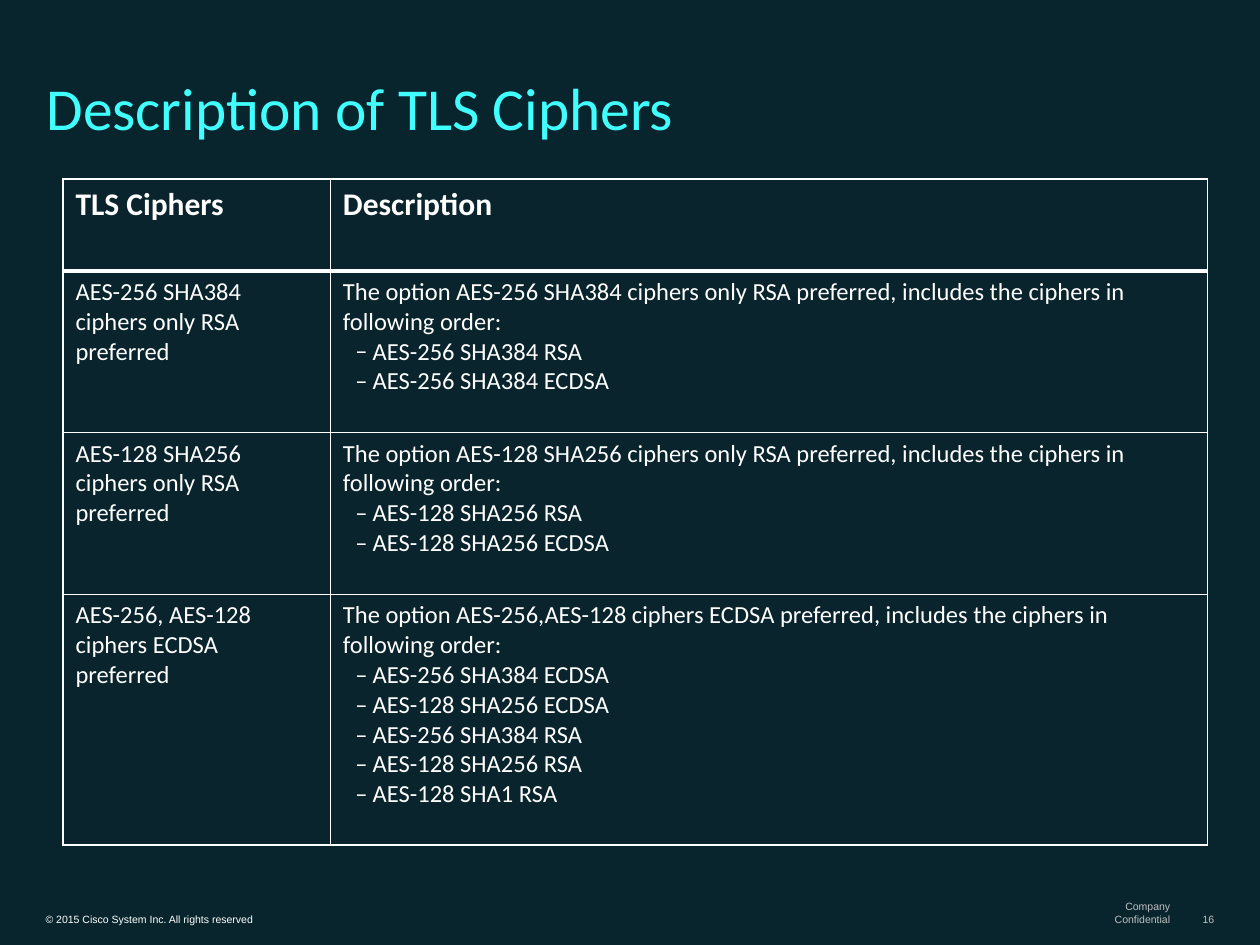
import pptx
import pptx.dml.color
import pptx.enum.text
import pptx.oxml
import pptx.oxml.ns
import pptx.util
from pptx.util import Cm, Pt

ALIGN = pptx.enum.text.PP_ALIGN
WHITE, GREY, CYAN = "FFFFFF", "C0C0C0", "40FFFE"
BACKGROUND, CELL_FILL = "08252E", "09242D"

TITLE = "Description of TLS Ciphers"
HEADINGS = ("TLS Ciphers", "Description")
INTRO = "The option {}, includes the ciphers in following order:"
CIPHERS = [
    ("AES-256 SHA384 ciphers only RSA preferred",
     INTRO.format("AES-256 SHA384 ciphers only RSA preferred"),
     ["AES-256 SHA384 RSA", "AES-256 SHA384 ECDSA"]),
    ("AES-128 SHA256 ciphers only RSA preferred",
     INTRO.format("AES-128 SHA256 ciphers only RSA preferred"),
     ["AES-128 SHA256 RSA", "AES-128 SHA256 ECDSA"]),
    ("AES-256, AES-128 ciphers ECDSA preferred",
     INTRO.format("AES-256,AES-128 ciphers ECDSA preferred"),
     ["AES-256 SHA384 ECDSA", "AES-128 SHA256 ECDSA", "AES-256 SHA384 RSA",
      "AES-128 SHA256 RSA", "AES-128 SHA1 RSA"]),
]
# text, left and width in cm, colour, alignment
FOOTERS = [
    ("© 2015 Cisco System Inc. All rights reserved", 0.69, 9.5, WHITE, ALIGN.LEFT),
    ("Company Confidential", 21.56, 2.26, GREY, ALIGN.RIGHT),
    ("16", 24, 0.71, GREY, ALIGN.RIGHT),
]
COLUMN_WIDTHS = (5.39, 17.68)
ROW_HEIGHTS = (1.85, 3.26, 3.26, 5.06)


def rgb(value):
    return pptx.dml.color.RGBColor.from_string(value)


def style(paragraph, size, color, font="Calibri", bold=False):
    paragraph.font.name = font
    paragraph.font.size = Pt(size)
    paragraph.font.bold = bold
    paragraph.font.color.rgb = rgb(color)


def add_label(slide, text, box, size, color, font, left_inset=0.23):
    """Add a bottom-anchored one-paragraph text box; box is in cm."""
    frame = slide.shapes.add_textbox(*map(Cm, box)).text_frame
    frame.vertical_anchor = pptx.enum.text.MSO_ANCHOR.BOTTOM
    frame.margin_left, frame.margin_right = Cm(left_inset), Cm(0.23)
    frame.margin_top = frame.margin_bottom = Cm(0.11)
    paragraph = frame.paragraphs[0]
    paragraph.text = text
    style(paragraph, size, color, font)
    return frame


def add_dash(paragraph):
    """Give the paragraph a hanging dash bullet."""
    properties = paragraph._p.get_or_add_pPr()
    properties.set("marL", str(Cm(0.6)))
    properties.set("indent", str(-Cm(0.35)))
    namespace = pptx.oxml.ns.nsdecls("a")
    for bullet in ('buFont {} typeface="Calibri"', 'buChar {} char="–"'):
        properties.append(pptx.oxml.parse_xml(f"<a:{bullet.format(namespace)}/>"))


def format_cell(cell, top, bottom):
    """Draw the borders, with top and bottom widths in points, and the fill."""
    properties = cell._tc.get_or_add_tcPr()
    for side, width in (("L", 1), ("R", 1), ("T", top), ("B", bottom)):
        properties.append(pptx.oxml.parse_xml(
            f'<a:ln{side} {pptx.oxml.ns.nsdecls("a")} w="{Pt(width)}">'
            f'<a:solidFill><a:srgbClr val="{WHITE}"/></a:solidFill></a:ln{side}>'))
    cell.fill.solid()
    cell.fill.fore_color.rgb = rgb(CELL_FILL)


def write_cell(cell, text, size, bold=False, items=()):
    first = cell.text_frame.paragraphs[0]
    first.text = text
    style(first, size, WHITE, bold=bold)
    for item in items:
        paragraph = cell.text_frame.add_paragraph()
        paragraph.text = item
        add_dash(paragraph)
        style(paragraph, size, WHITE)


def add_cipher_table(slide):
    table = slide.shapes.add_table(
        len(ROW_HEIGHTS), len(COLUMN_WIDTHS), Cm(1.27), Cm(3.61),
        Cm(sum(COLUMN_WIDTHS)), Cm(sum(ROW_HEIGHTS))).table
    table.first_row = table.horz_banding = False
    for column, width in zip(table.columns, COLUMN_WIDTHS):
        column.width = Cm(width)
    for number, (row, height) in enumerate(zip(table.rows, ROW_HEIGHTS)):
        row.height = Cm(height)
        for cell in row.cells:
            format_cell(cell, 3 if number == 1 else 1, 3 if number == 0 else 1)
    for column, heading in enumerate(HEADINGS):
        write_cell(table.cell(0, column), heading, 18, bold=True)
    for number, (option, description, order) in enumerate(CIPHERS, 1):
        write_cell(table.cell(number, 0), option, 14)
        write_cell(table.cell(number, 1), description, 14, items=order)


def main():
    deck = pptx.Presentation()
    deck.slide_width, deck.slide_height = Cm(25.4), Cm(19.05)
    slide = deck.slides.add_slide(deck.slide_layouts[6])
    slide.background.fill.solid()
    slide.background.fill.fore_color.rgb = rgb(BACKGROUND)

    for text, left, width, color, alignment in FOOTERS:
        footer = add_label(slide, text, (left, 18.29, width, 0.48), 6, color, "Arial")
        footer.word_wrap = alignment == ALIGN.LEFT
        footer.paragraphs[0].alignment = alignment
    title = add_label(slide, TITLE, (0.43, 0.64, 23.85, 2.34), 34, CYAN, "Calibri",
                      left_inset=0.51)
    title.word_wrap = True
    title.paragraphs[0].line_spacing = 0.8
    add_cipher_table(slide)
    deck.save("out.pptx")


if __name__ == "__main__":
    main()
